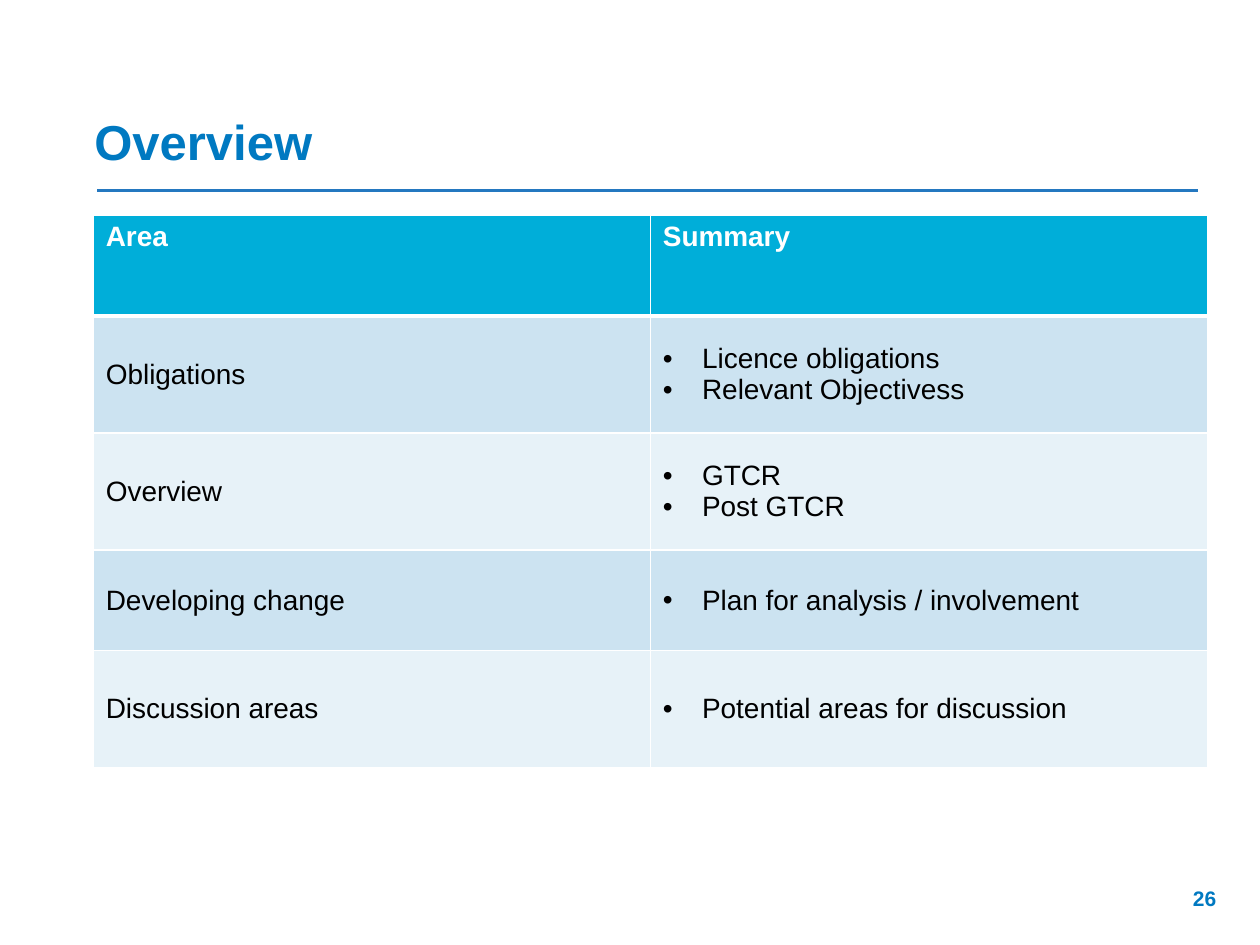
from lxml import etree
from pptx import Presentation
from pptx.dml.color import RGBColor
from pptx.enum import shapes, text
from pptx.oxml.ns import qn
from pptx.util import Cm, Pt

BLUE, CYAN, WHITE, BLACK = "0079C1", "00AED9", "FFFFFF", "000000"
BANDS = ["CCE3F1", "E7F2F8"]


def color(value):
    return RGBColor.from_string(value)


def add_run(paragraph, words, size, hex_color, bold=False):
    run = paragraph.add_run()
    run.text = words
    run.font.name = "Arial"
    run.font.size = Pt(size)
    run.font.bold = bold
    run.font.color.rgb = color(hex_color)


presentation = Presentation()
presentation.slide_width, presentation.slide_height = Cm(25.4), Cm(19.05)
slide = presentation.slides.add_slide(presentation.slide_layouts[5])

# Title
title = slide.shapes.title
title.left, title.top, title.width, title.height = Cm(1.65), Cm(2.11), Cm(22.48), Cm(1.45)
frame = title.text_frame
frame.vertical_anchor = text.MSO_ANCHOR.BOTTOM
frame.auto_size = text.MSO_AUTO_SIZE.SHAPE_TO_FIT_TEXT
frame.paragraphs[0].alignment = text.PP_ALIGN.LEFT
add_run(frame.paragraphs[0], "Overview", 28, BLUE, bold=True)

# Rule under the title
rule = slide.shapes.add_connector(
    shapes.MSO_CONNECTOR.STRAIGHT, Cm(1.96), Cm(3.84), Cm(24.16), Cm(3.84))
rule.line.color.rgb = color("2478C0")
rule.line.width = Pt(1.5)
etree.SubElement(rule.line._get_or_add_ln().getparent(), qn("a:effectLst"))

# Page number
number = slide.shapes.add_textbox(Cm(18.85), Cm(17.73), Cm(5.92), Cm(1.02))
number.text_frame.word_wrap = True
number.text_frame.paragraphs[0].alignment = text.PP_ALIGN.RIGHT
add_run(number.text_frame.paragraphs[0], "26", 12, BLUE, bold=True)

# Table: area on the left, bulleted summary on the right
rows = [
    ("Area", ["Summary"]),
    ("Obligations", ["Licence obligations", "Relevant Objectivess"]),
    ("Overview", ["GTCR", "Post GTCR"]),
    ("Developing change", ["Plan for analysis / involvement"]),
    ("Discussion areas", ["Potential areas for discussion"]),
]
row_heights = [2.03, 2.36, 2.36, 2.03, 2.36]
table = slide.shapes.add_table(
    len(rows), 2, Cm(1.88), Cm(4.34), Cm(22.46), Cm(sum(row_heights))).table
for column in table.columns:
    column.width = Cm(11.23)

for row_index, (area, summary) in enumerate(rows):
    table.rows[row_index].height = Cm(row_heights[row_index])
    header = row_index == 0
    for column_index, lines in enumerate([[area], summary]):
        cell = table.cell(row_index, column_index)
        cell.fill.solid()
        cell.fill.fore_color.rgb = color(CYAN if header else BANDS[(row_index - 1) % 2])
        cell.vertical_anchor = text.MSO_ANCHOR.TOP if header else text.MSO_ANCHOR.MIDDLE

        # Cell text
        for line_index, words in enumerate(lines):
            frame = cell.text_frame
            paragraph = frame.add_paragraph() if line_index else frame.paragraphs[0]
            if column_index == 1 and not header:
                properties = paragraph._p.get_or_add_pPr()
                properties.set("marL", str(Cm(0.79)))
                properties.set("indent", str(-Cm(0.79)))
                etree.SubElement(properties, qn("a:buFont"), typeface="Arial")
                etree.SubElement(properties, qn("a:buChar"), char="•")
            add_run(paragraph, words, 16, WHITE if header else BLACK, bold=header)

        # White borders, thicker below the header
        widths = {"L": 1, "R": 1, "T": 3 if row_index == 1 else 1, "B": 3 if header else 1}
        cell_properties = cell._tc.get_or_add_tcPr()
        for position, (side, width) in enumerate(widths.items()):
            border = etree.Element(qn(f"a:ln{side}"), w=str(Pt(width)))
            fill = etree.SubElement(border, qn("a:solidFill"))
            etree.SubElement(fill, qn("a:srgbClr"), val=WHITE)
            cell_properties.insert(position, border)

presentation.save("out.pptx")
